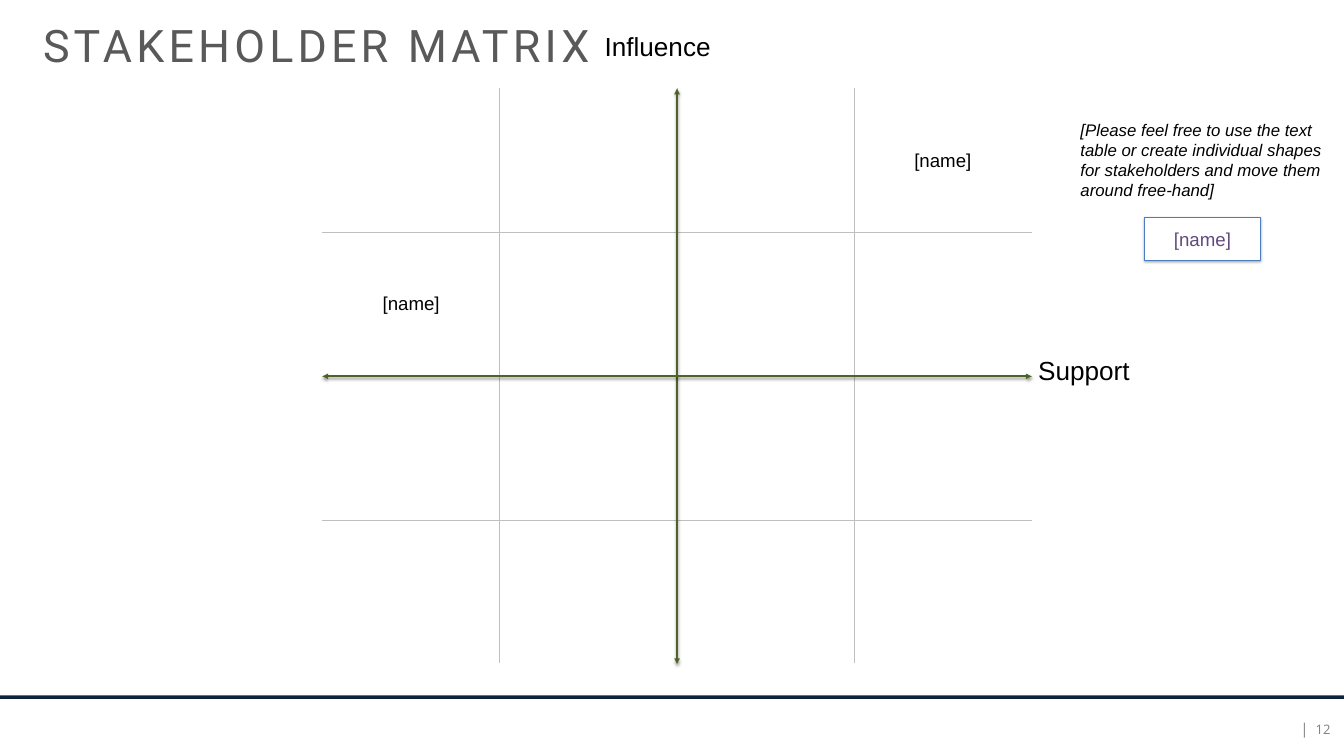
from lxml.etree import SubElement
from pptx import Presentation
from pptx.dml.color import RGBColor
from pptx.enum.shapes import MSO_CONNECTOR, MSO_SHAPE
from pptx.enum.text import MSO_ANCHOR, PP_ALIGN
from pptx.oxml.ns import qn
from pptx.util import Inches, Pt

WIDTH, HEIGHT = 20, 11.25
TITLE = ("STAKEHOLDER MATRIX", (0.54, 0.21, 9.46, 0.91))
PANELS = [
    ((0, 0, WIDTH, HEIGHT), "0F243E", None, False),
    ((0, 10.41, WIDTH, 0.84), "FFFFFF", "FFFFFF", True),
    ((0, 0, WIDTH, 10.35), "FFFFFF", None, False),
]
FOOTER = [
    ("12", (19.55, 10.74, 0.25, 0.24), 14),
    ("|", (19.35, 10.71, 0.12, 0.27), 16),
]
LABELS = [
    ("Influence", (8.9, 0.41, 2.36, 0.57), 28, False),
    ("Support", (15.35, 5.22, 2.05, 0.57), 28, False),
    ("[Please feel free to use the text table or create individual shapes "
     "for stakeholders and move them around free-hand]", (15.98, 1.73, 3.82, 1.31), 18, True),
]
STAKEHOLDERS = {(0, 3): "[name]", (1, 0): "[name]"}
LOOSE_STAKEHOLDER = ("[name]", (17.03, 3.23, 1.73, 0.64))
GRID = 4
LEFT, TOP, MATRIX_WIDTH, MATRIX_HEIGHT = 4.8, 1.32, 10.55, 8.56
MIDDLE_X, MIDDLE_Y = LEFT + MATRIX_WIDTH / 2, TOP + MATRIX_HEIGHT / 2
AXES = [
    (MIDDLE_X, TOP, MIDDLE_X, TOP + MATRIX_HEIGHT),
    (LEFT + MATRIX_WIDTH, MIDDLE_Y, LEFT, MIDDLE_Y),
]


def inches(lengths):
    return [Inches(length) for length in lengths]


def color(value):
    return RGBColor.from_string(value)


def set_effects(shape, shadowed, alpha=35, distance=1.8):
    effects = SubElement(shape.element.spPr, qn("a:effectLst"))
    if shadowed:
        shadow = SubElement(effects, qn("a:outerShdw"), blurRad=str(Pt(3.1)),
                            dist=str(Pt(distance)), dir="5400000", rotWithShape="0")
        black = SubElement(shadow, qn("a:srgbClr"), val="000000")
        SubElement(black, qn("a:alpha"), val=str(alpha * 1000))


def write(frame, text, size, font="Arial", ink="000000", align=PP_ALIGN.LEFT, italic=False):
    frame.text = text
    frame.word_wrap = True
    paragraph = frame.paragraphs[0]
    paragraph.alignment = align
    run = paragraph.runs[0]
    run.font.size = Pt(size)
    run.font.name = font
    run.font.italic = italic
    run.font.color.rgb = color(ink)
    return run


def add_panel(slide, box, fill, outline, shadowed):
    panel = slide.shapes.add_shape(MSO_SHAPE.RECTANGLE, *inches(box))
    panel.fill.solid()
    panel.fill.fore_color.rgb = color(fill)
    if outline:
        panel.line.color.rgb = color(outline)
        panel.line.width = Pt(0.75)
    else:
        panel.line.fill.background()
    set_effects(panel, shadowed)
    return panel


def add_footer(slide):
    for text, box, size in FOOTER:
        frame = slide.shapes.add_textbox(*inches(box)).text_frame
        frame.margin_left = frame.margin_right = frame.margin_top = frame.margin_bottom = 0
        write(frame, text, size, "Open Sans", "808080", PP_ALIGN.RIGHT)
        frame.word_wrap = False


def set_borders(cell, row, column):
    outer = {"lnL": column == 0, "lnR": column == GRID - 1,
             "lnT": row == 0, "lnB": row == GRID - 1}
    properties = cell._tc.get_or_add_tcPr()
    for side, is_outer in outer.items():
        border = SubElement(properties, qn(f"a:{side}"), w=str(Pt(1)))
        fill = SubElement(border, qn("a:solidFill"))
        SubElement(fill, qn("a:srgbClr"), val="FFFFFF" if is_outer else "BFBFBF")


def add_matrix(slide):
    matrix = slide.shapes.add_table(
        GRID, GRID, *inches((LEFT, TOP, MATRIX_WIDTH, MATRIX_HEIGHT))).table
    matrix.first_row = matrix.horz_banding = False
    for row in range(GRID):
        for column in range(GRID):
            cell = matrix.cell(row, column)
            cell.vertical_anchor = MSO_ANCHOR.MIDDLE
            cell.margin_left = cell.margin_right = Inches(0.2)
            cell.margin_top = cell.margin_bottom = Inches(0.1)
            set_borders(cell, row, column)
            cell.fill.background()
            if (row, column) in STAKEHOLDERS:
                write(cell.text_frame, STAKEHOLDERS[row, column], 20, align=PP_ALIGN.CENTER)


def place_title(slide):
    text, box = TITLE
    title = slide.shapes.title
    title.left, title.top, title.width, title.height = inches(box)
    run = write(title.text_frame, text, 48, "Roboto", "595959")
    run.font._element.set("spc", "450")
    title.text_frame.vertical_anchor = MSO_ANCHOR.TOP
    title.element.getparent().append(title.element)


def add_axes(slide):
    for ends in AXES:
        axis = slide.shapes.add_connector(MSO_CONNECTOR.STRAIGHT, *inches(ends))
        axis.line.color.rgb = color("4F6228")
        axis.line.width = Pt(2)
        outline = axis.element.spPr.find(qn("a:ln"))
        for end in ("a:headEnd", "a:tailEnd"):
            SubElement(outline, qn(end), type="triangle")
        set_effects(axis, True, alpha=38, distance=1.6)


def main():
    deck = Presentation()
    deck.slide_width, deck.slide_height = inches((WIDTH, HEIGHT))
    slide = deck.slides.add_slide(deck.slide_layouts[5])
    first_panels, top_panel = PANELS[:2], PANELS[2]
    for panel in first_panels:
        add_panel(slide, *panel)
    add_footer(slide)
    add_panel(slide, *top_panel)
    add_matrix(slide)
    place_title(slide)
    add_axes(slide)
    for text, box, size, italic in LABELS:
        label = slide.shapes.add_textbox(*inches(box))
        write(label.text_frame, text, size, italic=italic)
    name, box = LOOSE_STAKEHOLDER
    card = add_panel(slide, box, "FFFFFF", "4B7EBC", True)
    write(card.text_frame, name, 20, ink="604A7B", align=PP_ALIGN.CENTER)
    card.text_frame.vertical_anchor = MSO_ANCHOR.MIDDLE
    deck.save("out.pptx")


if __name__ == "__main__":
    main()
